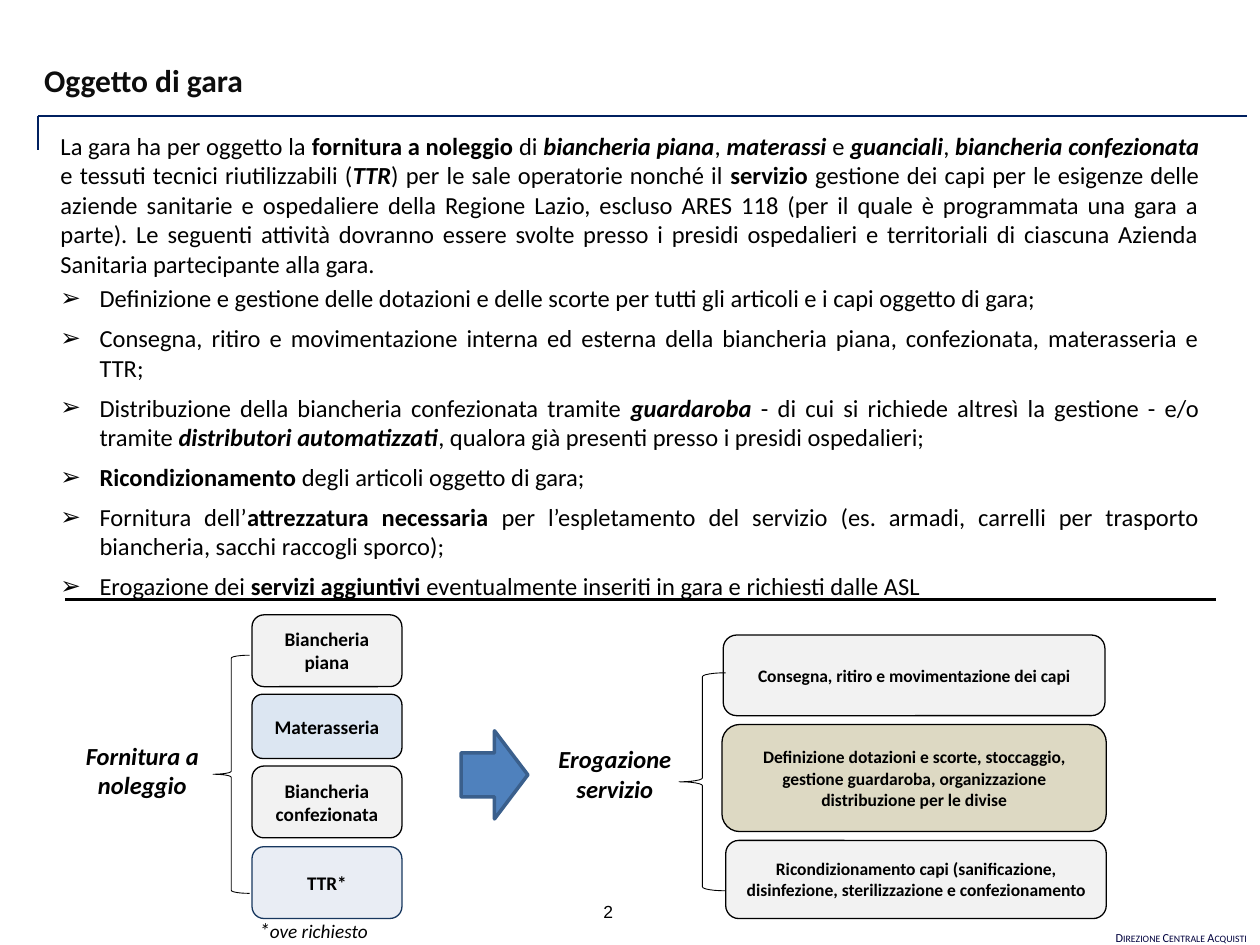
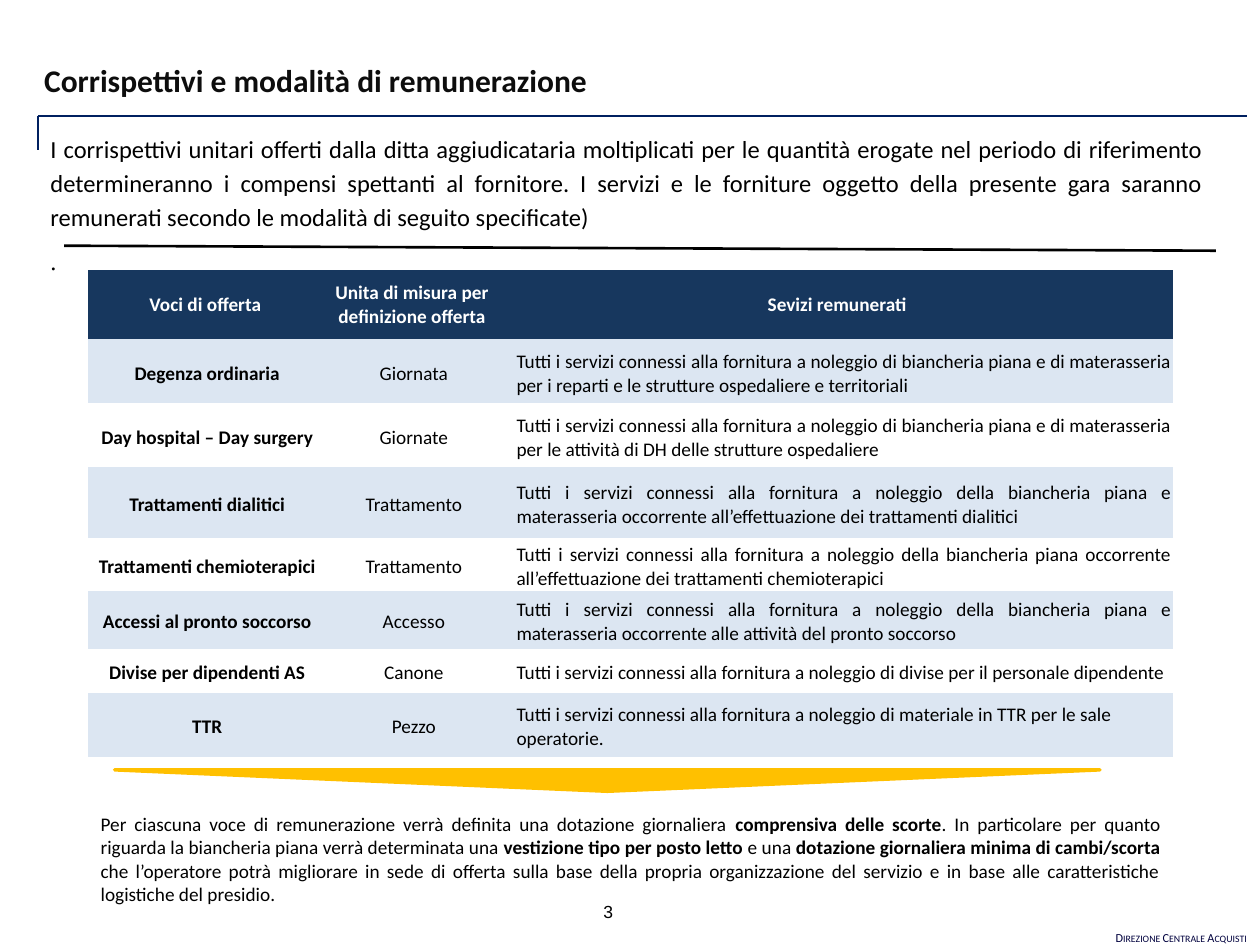
from dataclasses import dataclass, replace
from typing import NamedTuple

from lxml.etree import SubElement
from pptx import Presentation
from pptx.dml.color import RGBColor
from pptx.enum.shapes import MSO_CONNECTOR, MSO_SHAPE
from pptx.enum.text import MSO_ANCHOR, MSO_AUTO_SIZE, PP_ALIGN
from pptx.oxml.ns import qn
from pptx.util import Inches, Pt

LEFT, CENTER, JUSTIFY = PP_ALIGN.LEFT, PP_ALIGN.CENTER, PP_ALIGN.JUSTIFY
TOP, MIDDLE = MSO_ANCHOR.TOP, MSO_ANCHOR.MIDDLE
NO_FIT = MSO_AUTO_SIZE.NONE
STRAIGHT = MSO_CONNECTOR.STRAIGHT
ROUNDED, BRACE = MSO_SHAPE.ROUNDED_RECTANGLE, MSO_SHAPE.LEFT_BRACE
ARROW, TRIANGLE = MSO_SHAPE.RIGHT_ARROW, MSO_SHAPE.ISOSCELES_TRIANGLE

BLACK = RGBColor(0x00, 0x00, 0x00)
WHITE = RGBColor(0xFF, 0xFF, 0xFF)
TITLE_INK = RGBColor(0x0D, 0x0D, 0x0D)
FRAME_NAVY = RGBColor(0x00, 0x20, 0x60)
FOOTER_NAVY = RGBColor(0x00, 0x00, 0x3E)
HEADER_NAVY = RGBColor(0x17, 0x37, 0x5E)
PALE_GREY = RGBColor(0xF2, 0xF2, 0xF2)
PALE_BLUE = RGBColor(0xDC, 0xE6, 0xF2)
ICE_BLUE = RGBColor(0xE9, 0xED, 0xF4)
SAND = RGBColor(0xDD, 0xD9, 0xC3)
ARROW_BLUE = RGBColor(0x4F, 0x81, 0xBD)
ARROW_EDGE = RGBColor(0x3A, 0x5F, 0x8C)
GOLD = RGBColor(0xFF, 0xC0, 0x00)

SLIDE_WIDTH, SLIDE_HEIGHT = Inches(10), Inches(7.5)
COLUMNS, ROWS = 100, 75
NO_GRID_STYLE = "{2D5ABB26-0587-4C30-8999-92F81FD0307C}"


def across(columns: float) -> int:
    return round(SLIDE_WIDTH * columns / COLUMNS)


def down(rows: float) -> int:
    return round(SLIDE_HEIGHT * rows / ROWS)


class Area(NamedTuple):
    left: float
    top: float
    width: float
    height: float

    def lengths(self) -> tuple:
        return across(self.left), down(self.top), across(self.width), down(self.height)


class Margins(NamedTuple):
    left: float = 1
    top: float = 0.5
    right: float = 1
    bottom: float = 0.5


@dataclass(frozen=True)
class Style:
    size: float
    color: RGBColor = BLACK
    bold: bool = False
    italic: bool = False
    align: PP_ALIGN = LEFT
    font: str = "Calibri"
    before: float = 0
    after: float = 0
    spacing: object = 1.0
    left: float = 0
    hang: float = 0
    bullet: str = ""
    small_caps: bool = False


class Card(NamedTuple):
    area: Area
    text: str
    size: float
    fill: RGBColor
    edge: RGBColor = BLACK


TITLE = Style(18, TITLE_INK, bold=True)
BODY = Style(14, align=JUSTIFY, left=1)
BULLET = replace(BODY, left=4.1, hang=-3.1, bullet="➢", before=3, after=3)
INTRO = replace(BODY, spacing=1.15, after=6)
GROUP = Style(14, bold=True, italic=True, align=CENTER)
NUMBER = Style(10, font="Arial")
FOOTER = Style(7, FOOTER_NAVY, align=CENTER, spacing=Pt(14), small_caps=True)
NOTE = Style(11, align=JUSTIFY)
CELL = Style(11, align=CENTER)
NAME_CELL = replace(CELL, bold=True)
HEAD_CELL = replace(NAME_CELL, color=WHITE)

OBJECT_INTRO = (
    "La gara ha per oggetto la |fornitura a noleggio| di |/biancheria piana|, |/materassi| e "
    "|/guanciali|, |/biancheria confezionata| e tessuti tecnici riutilizzabili (|/TTR|) per le sale "
    "operatorie nonché il |servizio |gestione dei capi per le esigenze delle aziende sanitarie e "
    "ospedaliere della Regione Lazio, escluso ARES 118 (per il quale è programmata una gara a parte). "
    "Le seguenti attività dovranno essere svolte presso i presidi ospedalieri e territoriali di "
    "ciascuna Azienda Sanitaria partecipante alla gara.")
ACTIVITIES = (
    "Definizione e gestione delle dotazioni e delle scorte per tutti gli articoli e i capi oggetto di gara;",
    "Consegna, ritiro e movimentazione interna ed esterna della biancheria piana, confezionata, "
    "materasseria e TTR;",
    "Distribuzione della biancheria confezionata tramite |/guardaroba| - di cui si richiede altresì la "
    "gestione - e/o tramite |/distributori automatizzati|, qualora già presenti presso i presidi ospedalieri;",
    "|Ricondizionamento| degli articoli oggetto di gara;",
    "Fornitura dell’|attrezzatura necessaria |per l’espletamento del servizio (es. armadi, carrelli per "
    "trasporto biancheria, sacchi raccogli sporco);",
    "Erogazione dei |servizi aggiuntivi |eventualmente inseriti in gara e richiesti dalle ASL",
)
CARDS = (
    Card(Area(20, 48.8, 11.9, 5.7), "Biancheria piana", 11, PALE_GREY),
    Card(Area(20, 55.1, 11.9, 5.1), "Materasseria", 11, PALE_BLUE),
    Card(Area(20, 60.8, 11.9, 5.7), "Biancheria confezionata", 11, PALE_GREY),
    Card(Area(20, 67.2, 11.9, 5.7), "TTR*", 11, ICE_BLUE, HEADER_NAVY),
    Card(Area(57.4, 50.4, 30.3, 6.4), "Consegna, ritiro e movimentazione dei capi", 10, PALE_GREY),
    Card(Area(57.3, 57.5, 30.5, 8.5), "Definizione dotazioni e scorte, stoccaggio, gestione guardaroba, "
         "organizzazione distribuzione per le divise", 10, SAND),
    Card(Area(57.6, 66.7, 30.2, 6.2), "Ricondizionamento capi (sanificazione, disinfezione, "
         "sterilizzazione e confezionamento", 10, PALE_GREY),
)
PAYMENT_INTRO = (
    "I corrispettivi unitari offerti dalla ditta aggiudicataria moltiplicati per le quantità erogate nel "
    "periodo di riferimento determineranno i compensi spettanti al fornitore. I servizi e le forniture "
    "oggetto della presente gara saranno remunerati secondo le modalità di seguito specificate)")
COLUMN_WIDTHS = (18.6, 14.2, 53.3)
ROW_HEIGHTS = (5.5, 5.1, 5.1, 5.6, 3.9, 4.6, 3.5, 5.1)
HEADERS = ("Voci di offerta", "Unita di misura per definizione offerta", "Sevizi remunerati")
SUPPLY = "Tutti i servizi connessi alla fornitura a noleggio "
OFFER_ITEMS = (
    ("Degenza ordinaria", "Giornata", "di biancheria piana e di materasseria per i reparti e le strutture "
     "ospedaliere e territoriali"),
    ("Day hospital – Day surgery", "Giornate", "di biancheria piana e di materasseria per le attività di DH "
     "delle strutture ospedaliere"),
    ("Trattamenti dialitici", "Trattamento", "della biancheria piana e materasseria occorrente "
     "all’effettuazione dei trattamenti dialitici"),
    ("Trattamenti chemioterapici", "Trattamento", "della biancheria piana occorrente all’effettuazione dei "
     "trattamenti chemioterapici"),
    ("Accessi al pronto soccorso", "Accesso", "della biancheria piana e materasseria occorrente alle "
     "attività del pronto soccorso"),
    ("Divise per dipendenti AS", "Canone", "di divise per il personale dipendente"),
    ("TTR", "Pezzo", "di materiale in TTR per le sale operatorie."),
)
STOCK_NOTE = (
    "Per ciascuna voce di remunerazione verrà definita una dotazione giornaliera |comprensiva delle scorte|. "
    "In particolare per quanto riguarda la biancheria piana verrà determinata una |vestizione tipo per posto "
    "letto |e una |dotazione giornaliera minima di cambi/scorta |che l’operatore potrà migliorare in sede di "
    "offerta sulla base della propria organizzazione del servizio e in base alle caratteristiche logistiche "
    "del presidio.")


def write_paragraph(para, text: str, style: Style) -> None:
    properties = para._p.get_or_add_pPr()
    properties.set("marL", str(across(style.left)))
    properties.set("indent", str(across(style.hang)))
    if style.bullet:
        SubElement(properties, qn("a:buChar")).set("char", style.bullet)
    else:
        SubElement(properties, qn("a:buNone"))
    para.alignment = style.align
    para.line_spacing = style.spacing
    para.space_before, para.space_after = Pt(style.before), Pt(style.after)
    for index, part in enumerate(text.split("|")):
        if not part:
            continue
        strong = index % 2 == 1
        slanted = strong and part.startswith("/")
        span = para.add_run()
        span.text = part[1:] if slanted else part
        span.font.name, span.font.size = style.font, Pt(style.size)
        span.font.bold = style.bold or strong
        span.font.italic = style.italic or slanted
        span.font.color.rgb = style.color
        if style.small_caps:
            span.font._element.set("cap", "small")


def write(frame, lines: list, anchor=TOP, margins: Margins = Margins(), wrap: bool = True) -> None:
    frame.auto_size, frame.word_wrap, frame.vertical_anchor = NO_FIT, wrap, anchor
    frame.margin_left, frame.margin_right = across(margins.left), across(margins.right)
    frame.margin_top, frame.margin_bottom = down(margins.top), down(margins.bottom)
    for index, (text, style) in enumerate(lines):
        para = frame.add_paragraph() if index else frame.paragraphs[0]
        write_paragraph(para, text, style)


def add_text(page, area: Area, text: str, style: Style, **options):
    box = page.shapes.add_textbox(*area.lengths())
    write(box.text_frame, [(text, style)], **options)
    return box


def fill_placeholder(holder, area: Area, lines: list, **options) -> None:
    holder.left, holder.top, holder.width, holder.height = area.lengths()
    write(holder.text_frame, lines, **options)


def add_shape(page, kind, area: Area, fill, edge: RGBColor, weight: float):
    shape = page.shapes.add_shape(kind, *area.lengths())
    shape.shadow.inherit = False
    if fill is None:
        shape.fill.background()
    else:
        shape.fill.solid()
        shape.fill.fore_color.rgb = fill
    shape.line.color.rgb, shape.line.width = edge, Pt(weight)
    return shape


def add_line(page, start: tuple, end: tuple, color: RGBColor, weight: float) -> None:
    line = page.shapes.add_connector(
        STRAIGHT, across(start[0]), down(start[1]), across(end[0]), down(end[1]))
    line.line.color.rgb, line.line.width = color, Pt(weight)
    SubElement(line._element.spPr, qn("a:effectLst"))


def start_page(deck, title: str, number: int, body_area: Area, body: list):
    page = deck.slides.add_slide(deck.slide_layouts[1])
    corner = (3, 9.2)
    for end in ((3, 11.9), (99, 9.2)):
        add_line(page, corner, end, FRAME_NAVY, 1)
    fill_placeholder(page.shapes.title, Area(3.5, 4.4, 90, 5.4), [(title, TITLE)],
                     margins=Margins(0, 0.4, 0, 0))
    fill_placeholder(page.placeholders[1], body_area, body)
    add_text(page, Area(46.9, 71, 4.7, 2.7), str(number), NUMBER)
    add_text(page, Area(88.5, 73, 10.5, 2), "Direzione Centrale Acquisti", FOOTER,
             anchor=MIDDLE, margins=Margins(0, 0, 0, 0), wrap=False)
    return page


def build_object_page(deck) -> None:
    body = [(OBJECT_INTRO, BODY)] + [(activity, BULLET) for activity in ACTIVITIES]
    page = start_page(deck, "Oggetto di gara", 2, Area(2.8, 9.9, 93.4, 46.2), body)
    for card in CARDS:
        shape = add_shape(page, ROUNDED, card.area, card.fill, card.edge, 0.75)
        write(shape.text_frame, [(card.text, Style(card.size, bold=True, align=CENTER))], anchor=MIDDLE)
    add_line(page, (5.2, 47.6), (96.5, 47.6), BLACK, 1.5)
    for area in (Area(16.9, 52, 2.9, 18.9), Area(53.9, 53.4, 3.7, 17.3)):
        add_shape(page, BRACE, area, None, BLACK, 0.5)
    add_text(page, Area(5.4, 58.3, 11.8, 5.7), "Fornitura a noleggio", GROUP)
    add_text(page, Area(42.9, 58.6, 11.8, 5.7), "Erogazione servizio", GROUP)
    add_shape(page, ARROW, Area(36.6, 58, 5.3, 7), ARROW_BLUE, ARROW_EDGE, 2)
    footnote = add_text(page, Area(19.6, 72.3, 14.6, 3), "*||ove richiesto", Style(11, italic=True))
    footnote.text_frame.paragraphs[0].runs[0].font.size = Pt(12)


def add_offer_table(page) -> None:
    area = Area(7, 21.4, sum(COLUMN_WIDTHS), sum(ROW_HEIGHTS))
    table = page.shapes.add_table(len(ROW_HEIGHTS), len(COLUMN_WIDTHS), *area.lengths()).table
    table.first_row = table.horz_banding = False
    table._tbl.tblPr.find(qn("a:tableStyleId")).text = NO_GRID_STYLE
    for column, width in zip(table.columns, COLUMN_WIDTHS):
        column.width = across(width)
    for row, height in zip(table.rows, ROW_HEIGHTS):
        row.height = down(height)
    records = [HEADERS] + [(name, unit, SUPPLY + service) for name, unit, service in OFFER_ITEMS]
    for row, record in enumerate(records):
        fill = HEADER_NAVY if row == 0 else PALE_BLUE if row % 2 else WHITE
        service_style = replace(CELL, align=LEFT if row == len(OFFER_ITEMS) else JUSTIFY)
        styles = (NAME_CELL, CELL, service_style) if row else (HEAD_CELL,) * 3
        for column, (text, style) in enumerate(zip(record, styles)):
            cell = table.cell(row, column)
            cell.fill.solid()
            cell.fill.fore_color.rgb = fill
            cell.vertical_anchor = MIDDLE
            cell.margin_left = across((0.4, 0.4, 1.2)[column] if row else 0.1)
            cell.margin_top = down(0.4 if row else 0.1)
            cell.margin_right, cell.margin_bottom = across(0.1), 0
            write_paragraph(cell.text_frame.paragraphs[0], text, style)


def build_payment_page(deck) -> None:
    body = [(PAYMENT_INTRO, INTRO), (".", replace(INTRO, font="Times New Roman"))]
    page = start_page(deck, "Corrispettivi e modalità di remunerazione", 3, Area(2, 9.8, 94.5, 12.5), body)
    add_offer_table(page)
    add_line(page, (5.1, 19.5), (96.5, 19.9), BLACK, 1.5)
    add_shape(page, TRIANGLE, Area(9.1, 61.1, 78.2, 1.7), GOLD, GOLD, 2).rotation = 180
    add_text(page, Area(7, 64, 86.1, 8.4), STOCK_NOTE, NOTE)


def main() -> None:
    deck = Presentation()
    deck.slide_width, deck.slide_height = SLIDE_WIDTH, SLIDE_HEIGHT
    build_object_page(deck)
    build_payment_page(deck)
    deck.save("out.pptx")


if __name__ == "__main__":
    main()
